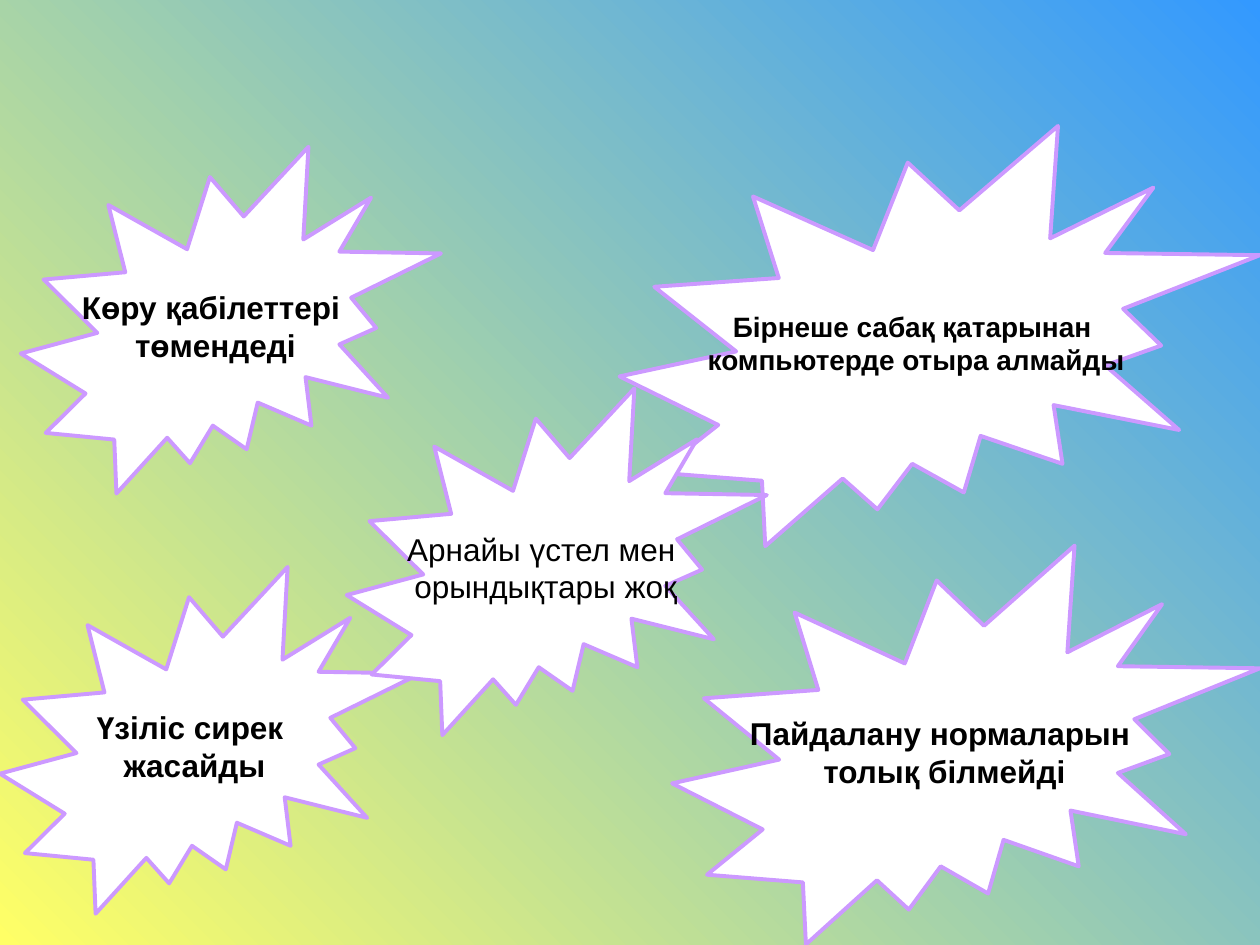
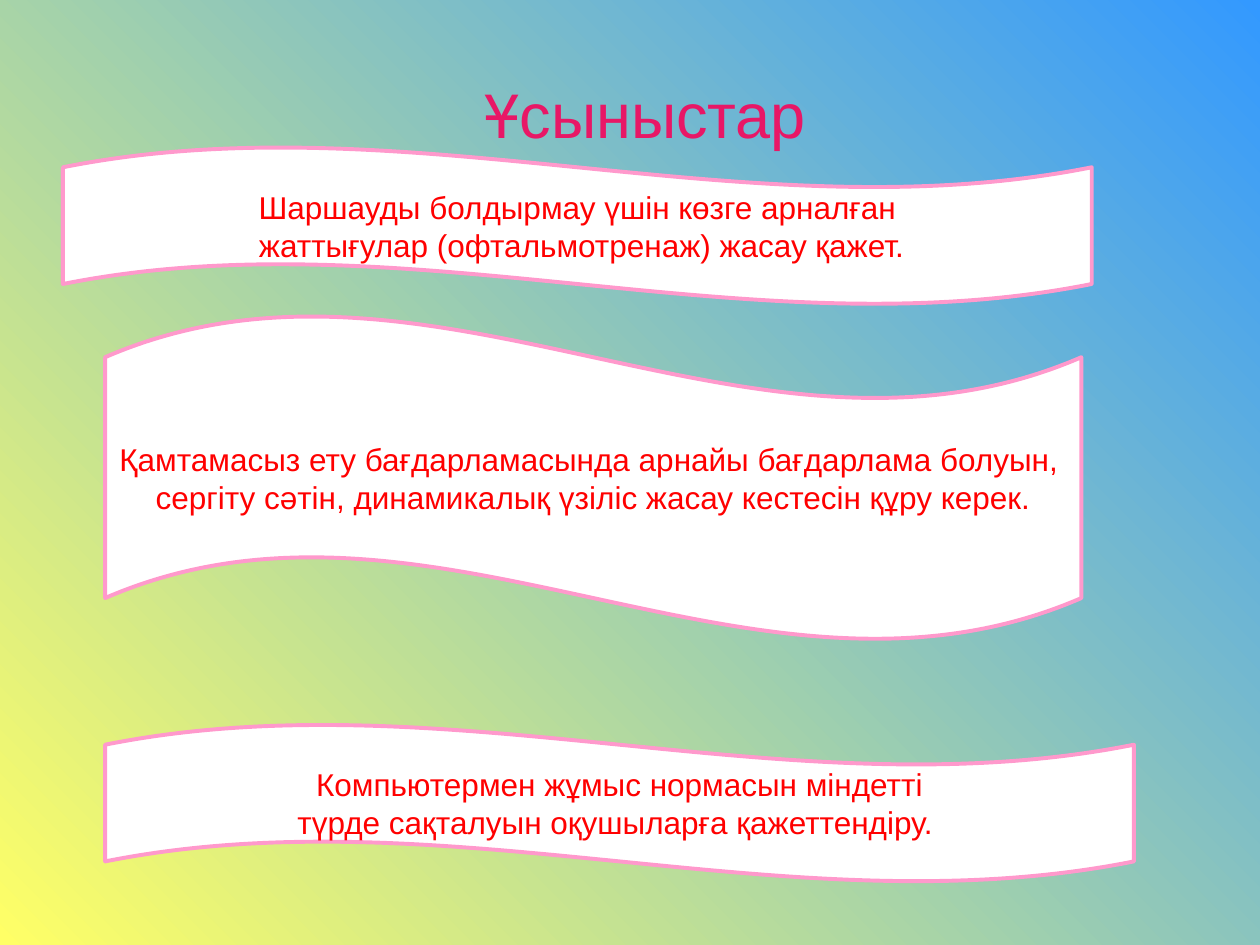
from dataclasses import dataclass

from lxml import etree
from pptx import Presentation, util as u
from pptx.dml.color import RGBColor
from pptx.enum import shapes, text
from pptx.oxml.ns import qn

YELLOW = RGBColor(0xFF, 0xFF, 0x66)
BLUE = RGBColor(0x33, 0x99, 0xFF)
WHITE = RGBColor(0xFF, 0xFF, 0xFF)
BLACK = RGBColor(0, 0, 0)
RED = RGBColor(0xFF, 0, 0)
LILAC = RGBColor(0xCC, 0x99, 0xFF)
PINK = RGBColor(0xFF, 0x99, 0xCC)
SILVER = RGBColor(0xEA, 0xEA, 0xEA)
RAINBOW = [
    (0, RGBColor(0xA6, 0x03, 0xAB)),
    (12, RGBColor(0xE8, 0x17, 0x66)),
    (27, RGBColor(0xEE, 0x3F, 0x17)),
    (48, RGBColor(0xFF, 0xFF, 0)),
    (65, RGBColor(0x1A, 0x8D, 0x48)),
    (79, RGBColor(0x08, 0x19, 0xFB)),
    (100, RGBColor(0xA6, 0x03, 0xAB)),
]
FONT = "Arial"


@dataclass
class Style:
    kind: shapes.MSO_SHAPE
    edge: RGBColor
    ink: RGBColor


@dataclass
class Item:
    box: tuple[float, float, float, float]  # left, top, width, height in cm
    lines: list[str]
    size: int = 18
    bold: bool = False


BURST = Style(shapes.MSO_SHAPE.EXPLOSION2, LILAC, BLACK)
WAVE = Style(shapes.MSO_SHAPE.WAVE, PINK, RED)

ISSUES = [
    Item((0.42, 2.96, 8.47, 6.99), ["Көру қабілеттері ", "төмендеді"], bold=True),
    Item((13.55, 11, 11.85, 8.04),
         ["Пайдалану нормаларын ", "толық білмейді"], bold=True),
    Item((12.49, 2.54, 12.91, 8.47),
         ["Бірнеше сабақ қатарынан ", "компьютерде отыра алмайды"], 16, True),
    Item((0, 11.43, 8.47, 6.99), ["Үзіліс сирек ", "жасайды"], bold=True),
    Item((6.99, 7.83, 8.47, 6.99), ["Арнайы үстел мен", " орындықтары жоқ"]),
]
ADVICE = [
    Item((1.27, 2.96, 20.74, 3.18),
         ["Шаршауды болдырмау үшін көзге арналған",
          " жаттығулар (офтальмотренаж) жасау қажет."]),
    Item((2.12, 6.35, 19.68, 6.56),
         ["Қамтамасыз ету бағдарламасында арнайы бағдарлама болуын, ",
          "сергіту сәтін, динамикалық үзіліс жасау кестесін құру керек."]),
    Item((2.12, 14.6, 20.74, 3.18),
         ["Компьютермен жұмыс нормасын міндетті",
          "түрде сақталуын оқушыларға қажеттендіру. "]),
]
TITLE = Item((4.02, 1.4, 17.98, 1.45), ["Ұсыныстар"], 36)


def apply(obj, vals: dict) -> None:
    for key, val in vals.items():
        setattr(obj, key, val)


def add_slide(prs):
    """Blank slide on the shared yellow-to-blue diagonal."""
    slide = prs.slides.add_slide(prs.slide_layouts[6])
    fill = slide.background.fill
    fill.gradient()
    fill.gradient_angle = 45
    for stop, tint in zip(fill.gradient_stops, (YELLOW, BLUE)):
        stop.color.rgb = tint
    return slide


def write(shape, item: Item, anchor) -> list:
    """Fill the shape with centred, unwrapped lines and return their runs."""
    frame = shape.text_frame
    apply(frame, {"word_wrap": False, "vertical_anchor": anchor})
    runs = []
    for num, line in enumerate(item.lines):
        para = frame.add_paragraph() if num else frame.paragraphs[0]
        para.alignment = text.PP_ALIGN.CENTER
        run = para.add_run()
        run.text = line
        apply(run.font, {"name": FONT, "size": u.Pt(item.size),
                         "bold": item.bold})
        runs.append(run)
    return runs


def add_item(slide, item: Item, style: Style):
    shape = slide.shapes.add_shape(style.kind, *map(u.Cm, item.box))
    shape.shadow.inherit = False
    shape.fill.solid()
    shape.fill.fore_color.rgb = WHITE
    shape.line.color.rgb = style.edge
    shape.line.width = u.Pt(2.25)
    for run in write(shape, item, text.MSO_ANCHOR.MIDDLE):
        run.font.color.rgb = style.ink
    return shape


def add_tint(parent, tint: RGBColor) -> None:
    etree.SubElement(parent, qn("a:srgbClr"), val=str(tint))


def add_title(slide, item: Item) -> None:
    """Title with a rainbow fill and a thin outline."""
    box = slide.shapes.add_textbox(*map(u.Cm, item.box))
    for run in write(box, item, text.MSO_ANCHOR.TOP):
        props = run.font._element
        edge = etree.Element(qn("a:ln"), w=str(u.Pt(1)))
        add_tint(etree.SubElement(edge, qn("a:solidFill")), SILVER)
        grad = etree.Element(qn("a:gradFill"))
        stops = etree.SubElement(grad, qn("a:gsLst"))
        for pos, tint in RAINBOW:
            add_tint(etree.SubElement(stops, qn("a:gs"), pos=str(pos * 1000)), tint)
        etree.SubElement(grad, qn("a:lin"), ang="0", scaled="1")
        props.insert(0, edge)
        props.insert(1, grad)


def main() -> None:
    prs = Presentation()
    apply(prs, {"slide_width": u.Cm(25.4), "slide_height": u.Cm(19.05)})

    # Problems: bursts
    slide = add_slide(prs)
    for item in ISSUES:
        add_item(slide, item, BURST)

    # Recommendations: title and waves
    slide = add_slide(prs)
    add_title(slide, TITLE)
    for item in ADVICE:
        wave = add_item(slide, item, WAVE)
        wave.adjustments[0] = 0.13

    prs.save("out.pptx")


if __name__ == "__main__":
    main()
